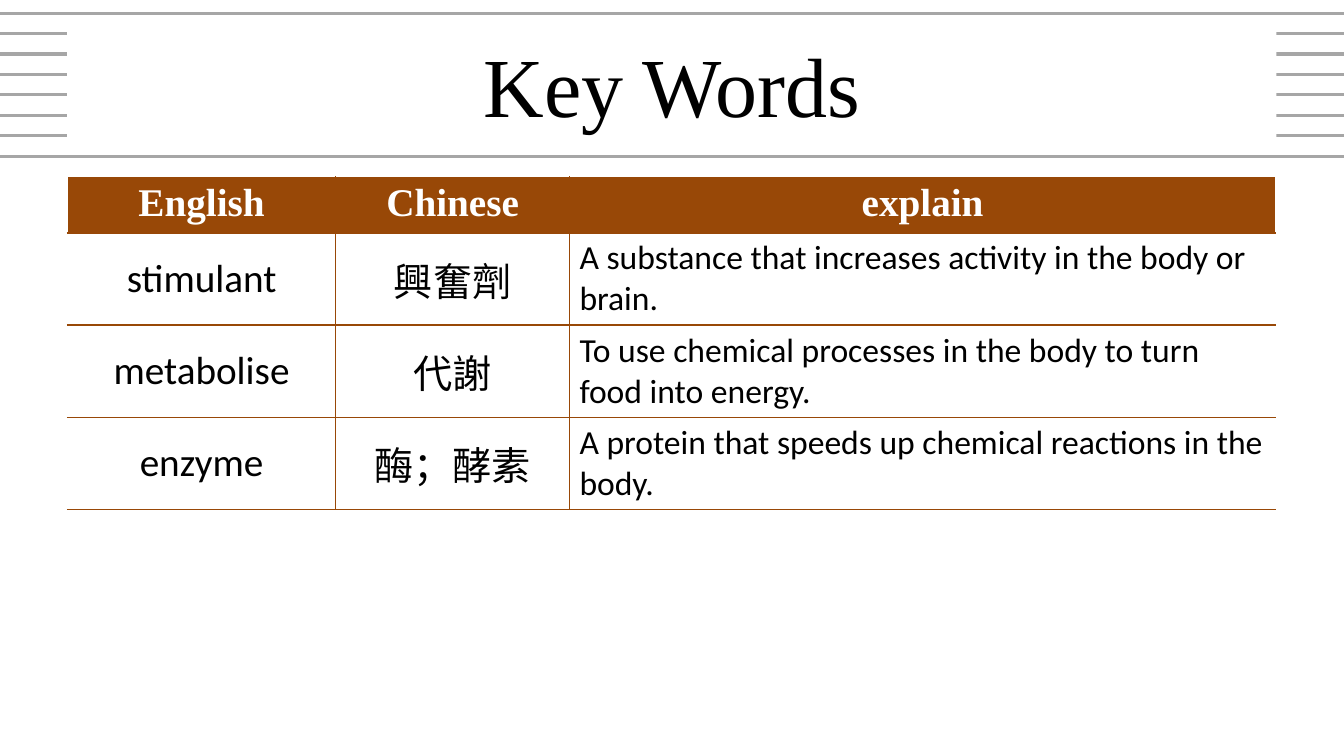
from dataclasses import dataclass

from lxml.etree import SubElement
from pptx import Presentation
from pptx.dml.color import RGBColor
from pptx.enum.shapes import MSO_CONNECTOR, MSO_SHAPE
from pptx.enum.text import MSO_ANCHOR as Anchor, PP_ALIGN as Align
from pptx.oxml import parse_xml
from pptx.oxml.ns import nsdecls, qn
from pptx.util import Cm, Pt


@dataclass(frozen=True)
class Theme:
    white: str = "FFFFFF"
    black: str = "000000"
    brown: str = "984807"
    grey: str = "A6A6A6"
    serif: str = "Times New Roman"
    sans: str = "Calibri"
    chinese: str = "Noto Sans CJK SC"
    title_size: int = 60
    word_size: int = 28
    explain_size: int = 24
    stripe_width: float = 2.25
    border_width: float = 1


THEME = Theme()
HEADINGS = ("English", "Chinese", "explain")
WORDS = (
    ("stimulant", "興奮劑",
     "A substance that increases activity in the body or brain."),
    ("metabolise", "代謝",
     "To use chemical processes in the body to turn food into energy."),
    ("enzyme", "酶；酵素",
     "A protein that speeds up chemical reactions in the body."),
)
COLUMN_WIDTHS = (6.76, 5.89, 17.8)
HEADER_HEIGHT, WORD_HEIGHT = 1.42, 2.29
# Font, size and alignment of each column below the header
COLUMN_STYLES = (
    (THEME.sans, THEME.word_size, Align.CENTER),
    (THEME.chinese, THEME.word_size, Align.CENTER),
    (THEME.sans, THEME.explain_size, Align.LEFT),
)


def set_fill(target, color):
    target.fill.solid()
    target.fill.fore_color.rgb = RGBColor.from_string(color)


def write_text(frame, text, font, size, color, align, bold=False):
    paragraph = frame.paragraphs[0]
    paragraph.alignment = align
    run = paragraph.add_run()
    run.text = text
    run.font.name = font
    run.font.size = Pt(size)
    run.font.bold = bold
    run.font.color.rgb = RGBColor.from_string(color)
    SubElement(run.font._element, qn("a:ea"), typeface=font)


def add_stripes(slide, count=8, left=-0.28, right=34.06, top=0.33, bottom=3.94):
    """Rule evenly spaced lines across the slide, behind the title."""
    for index in range(count):
        y = Cm(top + (bottom - top) * index / (count - 1))
        stripe = slide.shapes.add_connector(
            MSO_CONNECTOR.STRAIGHT, Cm(left), y, Cm(right), y)
        stripe.line.color.rgb = RGBColor.from_string(THEME.grey)
        stripe.line.width = Pt(THEME.stripe_width)
        SubElement(stripe._element.spPr, qn("a:effectLst"))


def add_title(slide, text):
    title = slide.shapes.add_shape(
        MSO_SHAPE.RECTANGLE, Cm(1.69), Cm(0.71), Cm(30.48), Cm(2.82))
    title.shadow.inherit = False
    set_fill(title, THEME.white)
    title.line.fill.background()
    title.text_frame.word_wrap = True
    title.text_frame.vertical_anchor = Anchor.MIDDLE
    write_text(title.text_frame, text, THEME.serif, THEME.title_size,
               THEME.black, Align.CENTER)


def set_borders(cell, colors):
    """Draw the left, right, top and bottom borders in the given colours."""
    properties = cell._tc.get_or_add_tcPr()
    for index, (side, color) in enumerate(zip("LRTB", colors)):
        properties.insert(index, parse_xml(
            f'<a:ln{side} {nsdecls("a")} w="{Pt(THEME.border_width)}">'
            f'<a:solidFill><a:srgbClr val="{color}"/></a:solidFill>'
            f'</a:ln{side}>'))


def add_word_table(slide):
    rows = (HEADINGS, *WORDS)
    heights = (HEADER_HEIGHT, *[WORD_HEIGHT] * len(WORDS))
    table = slide.shapes.add_table(
        len(rows), len(HEADINGS), Cm(1.7), Cm(4.45),
        Cm(sum(COLUMN_WIDTHS)), Cm(sum(heights))).table
    table.first_row = table.horz_banding = False
    for column, width in zip(table.columns, COLUMN_WIDTHS):
        column.width = Cm(width)
    last = len(HEADINGS) - 1
    for i, (texts, height) in enumerate(zip(rows, heights)):
        table.rows[i].height = Cm(height)
        for j, text in enumerate(texts):
            cell = table.cell(i, j)
            header = i == 0
            set_fill(cell, THEME.brown if header else THEME.white)
            outer_edges = (j == 0, j == last, header, False)
            set_borders(cell, [THEME.white if outer else THEME.brown
                               for outer in outer_edges])
            if header:
                write_text(cell.text_frame, text, THEME.serif, THEME.word_size,
                           THEME.white, Align.CENTER, bold=True)
            else:
                cell.vertical_anchor = Anchor.MIDDLE
                font, size, align = COLUMN_STYLES[j]
                write_text(cell.text_frame, text, font, size, THEME.black, align)


def main():
    presentation = Presentation()
    presentation.slide_width, presentation.slide_height = Cm(33.87), Cm(19.05)
    slide = presentation.slides.add_slide(presentation.slide_layouts[6])
    add_stripes(slide)
    add_title(slide, "Key Words")
    add_word_table(slide)
    presentation.save("out.pptx")


if __name__ == "__main__":
    main()
